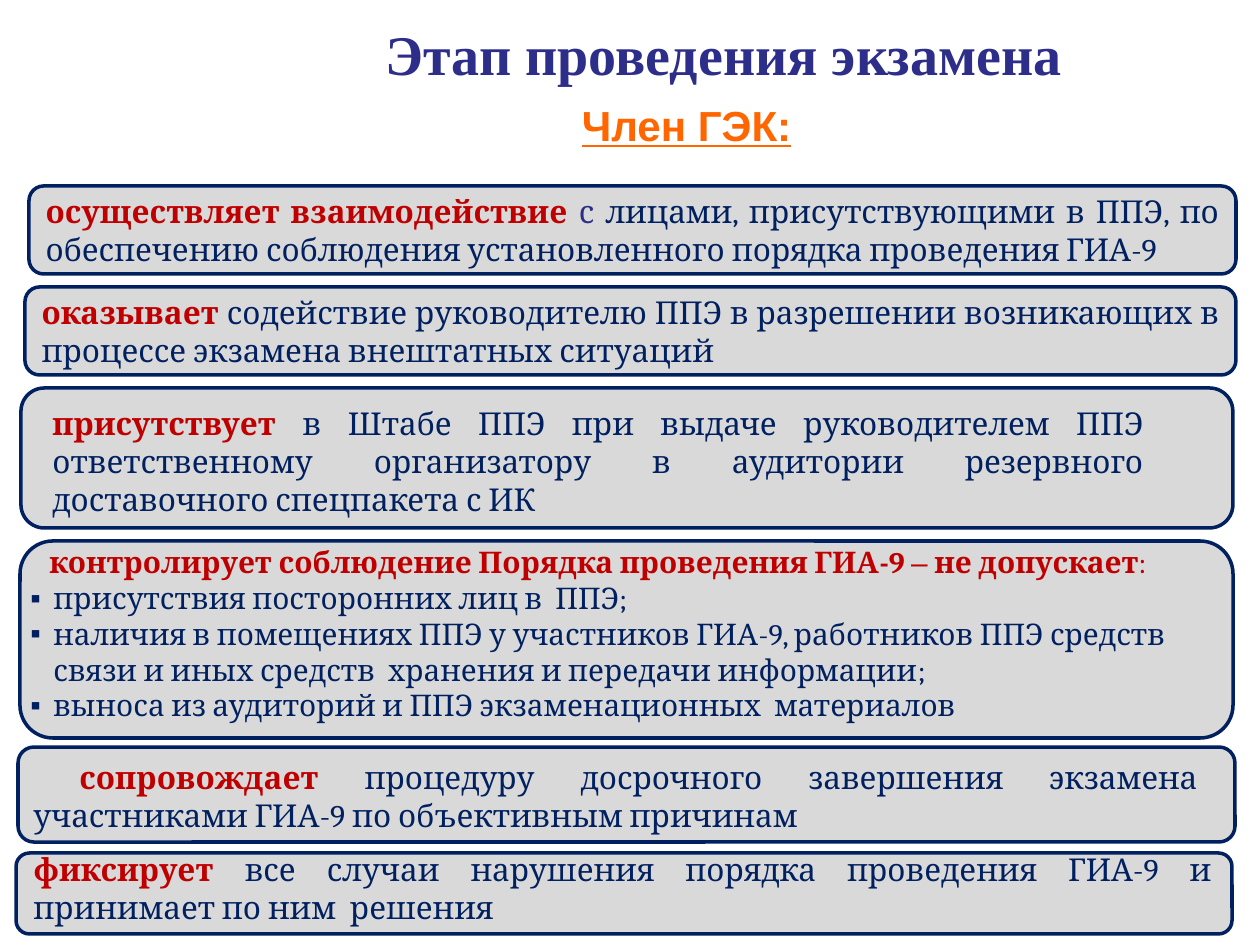
"""Build the slide on the duties of a GEK member during the exam."""
from lxml.etree import SubElement
from pptx import Presentation
from pptx.dml.color import RGBColor
from pptx.enum.shapes import MSO_SHAPE
from pptx.enum.text import MSO_ANCHOR, PP_ALIGN
from pptx.oxml.ns import qn
from pptx.util import Emu, Pt

NAVY, RED, INDIGO, ORANGE, GREY = "002060", "C00000", "2D2D8A", "FF6600", "D9D9D9"


def px(n):
    """Turn pixels into EMU."""
    return Emu(round(n * 914400 / 126))


def rgb(color):
    """Turn a hex string into a colour."""
    return RGBColor.from_string(color)


def style(r, size, color, bold=False, font="Cambria"):
    """Format one run."""
    r.font.size, r.font.bold, r.font.name = Pt(size), bold, font
    r.font.color.rgb = rgb(color)


def fill_paragraph(p, parts, size=18, align=PP_ALIGN.JUSTIFY, indent=0):
    """Fill a paragraph with runs given as (text, colour, bold, font)."""
    p.alignment = align
    if indent:
        p._p.get_or_add_pPr().set("indent", str(px(indent)))
    for text, *look in parts:
        r = p.add_run()
        r.text = text
        style(r, size, *look)


def add_bullet(p, indent):
    """Give a paragraph a navy square bullet with a hanging indent."""
    pPr = p._p.get_or_add_pPr()
    pPr.set("marL", str(px(indent)))
    pPr.set("indent", str(-px(indent)))
    SubElement(SubElement(pPr, qn("a:buClr")), qn("a:srgbClr")).set("val", NAVY)
    SubElement(pPr, qn("a:buFont")).set("typeface", "Arial")
    SubElement(pPr, qn("a:buChar")).set("char", "▪")


def add_text_box(s, x, y, w, h):
    """Add a wrapping text box and return its text frame."""
    tf = s.shapes.add_textbox(px(x), px(y), px(w), px(h)).text_frame
    tf.word_wrap = True
    return tf


def add_header(s, x, y, w, h):
    """Place the stage heading and, below it, the title naming the role."""
    tf = add_text_box(s, x + 7, y, w - 7, 81)
    tf.text = "Этап проведения экзамена"
    p = tf.paragraphs[0]
    p.alignment = PP_ALIGN.CENTER
    style(p.runs[0], 32, INDIGO, True, "Times New Roman")

    sp = s.shapes.title
    sp.left, sp.top, sp.width, sp.height = px(x), px(y + 75), px(w - 68), px(h - 75)
    tf = sp.text_frame
    tf.text = "Член ГЭК:"
    tf.vertical_anchor = MSO_ANCHOR.MIDDLE
    tf.margin_bottom = px(38)
    p = tf.paragraphs[0]
    p.alignment = PP_ALIGN.CENTER
    style(p.runs[0], 24, ORANGE, True, "Arial")
    p.runs[0].font.underline = True


def add_card(s, x, y, w, h):
    """Add a rounded grey card and return its text frame."""
    sp = s.shapes.add_shape(MSO_SHAPE.ROUNDED_RECTANGLE, px(x), px(y), px(w), px(h))
    sp.shadow.inherit = False
    sp.fill.solid()
    sp.fill.fore_color.rgb = rgb(GREY)
    sp.line.color.rgb = rgb(NAVY)
    sp.line.width = Pt(2)
    tf = sp.text_frame
    tf.word_wrap = True
    tf.vertical_anchor = MSO_ANCHOR.MIDDLE
    return tf


def add_duty(s, box, parts, inner=None, indent=0):
    """Add a card with one duty, in the card or in a text box offset from it."""
    x, y, w, h = box
    tf = add_card(s, x, y, w, h)
    if inner:
        dx, dy, iw, ih = inner
        tf = add_text_box(s, x + dx, y + dy, iw, ih)
    fill_paragraph(tf.paragraphs[0], parts, indent=indent)


def add_ban_list(s, x, y, w, h, head, items):
    """Add a card with a heading and a bulleted list of what is banned."""
    add_card(s, x, y, w, h)
    tf = add_text_box(s, x - 2, y - 3, w - 6, h - 2)
    fill_paragraph(tf.paragraphs[0], head, 17, indent=19)
    for item in items:
        p = tf.add_paragraph()
        add_bullet(p, 23)
        fill_paragraph(p, [(item, NAVY)], 17, PP_ALIGN.LEFT)


def main():
    """Build and save the slide."""
    prs = Presentation()
    prs.slide_width, prs.slide_height = px(1260), px(945)
    s = prs.slides.add_slide(prs.slide_layouts[5])
    add_header(s, 256, 13, 929, 180)
    add_duty(s, (29, 186, 1207, 88), [
        ("осуществляет взаимодействие ", RED, True),
        ("с ", INDIGO),
        ("лицами, присутствующими в ППЭ, по обеспечению соблюдения "
         "установленного порядка проведения ГИА-9", NAVY)])
    add_duty(s, (25, 287, 1211, 88), [
        ("оказывает ", RED, True),
        ("содействие руководителю ППЭ в разрешении возникающих в процессе "
         "экзамена внештатных ситуаций", NAVY)])
    add_duty(s, (21, 388, 1212, 140), [
        ("присутствует ", RED, True),
        ("в Штабе ППЭ при выдаче руководителем ППЭ ответственному организатору "
         "в аудитории резервного доставочного спецпакета с ИК", NAVY)],
        inner=(19, 10, 1116, 127))
    add_ban_list(s, 20, 541, 1213, 197, [
        ("контролирует соблюдение Порядка проведения ГИА-9 ", RED, True),
        ("–", RED, False, "Arial"),
        (" не допускает", RED, True),
        (":", RED)], [
        "присутствия посторонних лиц в  ППЭ;",
        "наличия в помещениях ППЭ у участников ГИА-9, работников ППЭ средств "
        "связи и иных средств  хранения и передачи информации;",
        "выноса из аудиторий и ППЭ экзаменационных  материалов"])
    add_duty(s, (18, 747, 1217, 95), [
        ("сопровождает ", RED, True),
        ("процедуру досрочного завершения экзамена участниками ГИА-9 "
         "по объективным причинам", NAVY)],
        inner=(3, 5, 1189, 88), indent=46)
    add_duty(s, (16, 853, 1216, 81), [
        ("фиксирует ", RED, True),
        ("все случаи нарушения порядка проведения ГИА-9 и принимает "
         "по ним  решения", NAVY)],
        inner=(5, -9, 1203, 89))
    prs.save("out.pptx")


if __name__ == "__main__":
    main()
